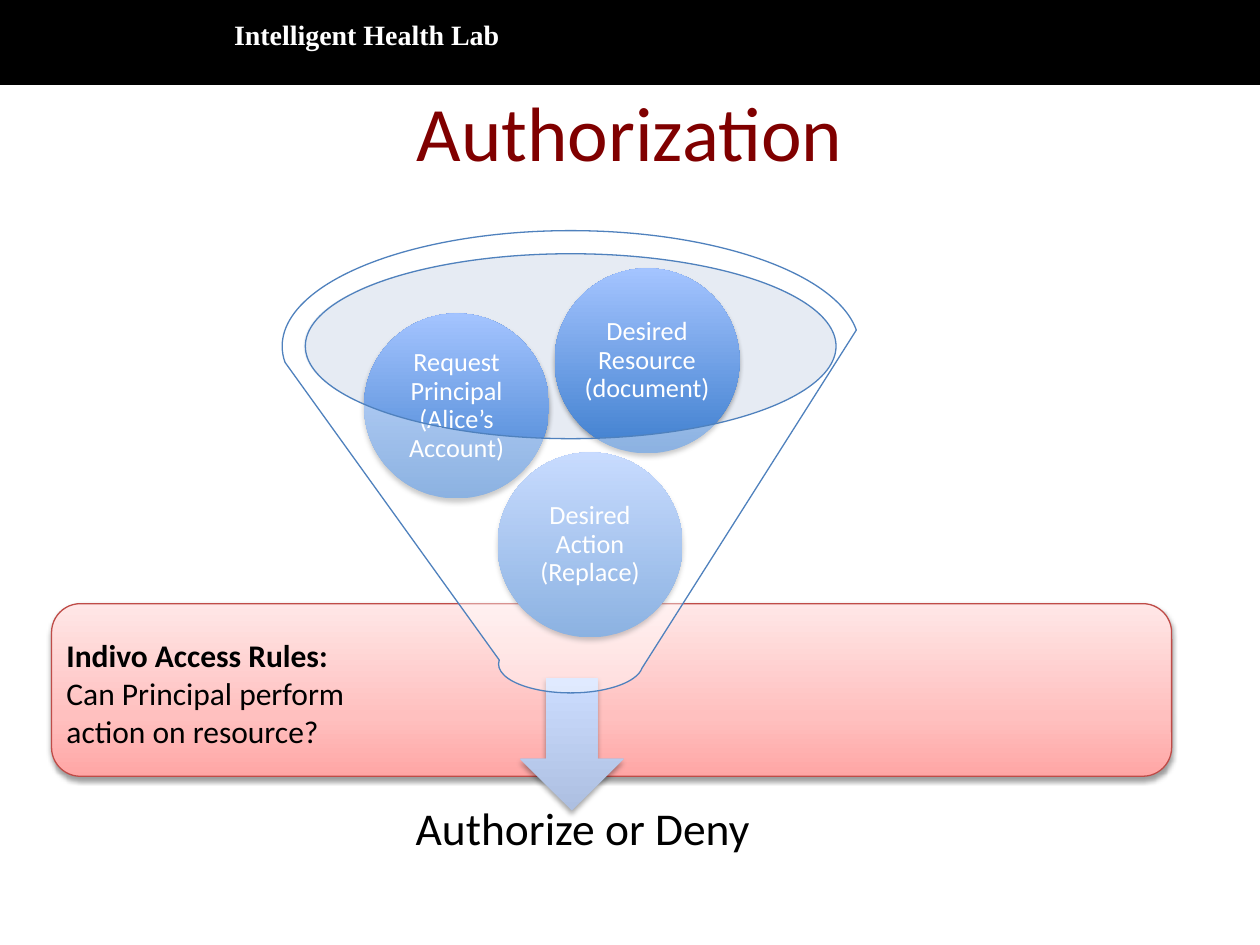
from copy import deepcopy

from lxml.etree import SubElement
from pptx import Presentation
from pptx.dml.color import RGBColor
from pptx.enum.shapes import MSO_SHAPE as Shape
from pptx.enum.text import MSO_ANCHOR as Anchor, MSO_AUTO_SIZE as AutoSize, PP_ALIGN as Align
from pptx.oxml.ns import qn
from pptx.util import Cm, Pt

BLACK = RGBColor(0x00, 0x00, 0x00)
WHITE = RGBColor(0xFF, 0xFF, 0xFF)
MAROON = RGBColor(0x80, 0x00, 0x00)
RED_LINE = RGBColor(0xBF, 0x4C, 0x48)
FUNNEL_LINE = RGBColor(0x4F, 0x81, 0xBD)
RIM = RGBColor(0xC2, 0xCD, 0xE1)
# Gradient stops run from bottom to top
RED_STOPS = [(0, RGBColor(0xFF, 0xA6, 0xA5)), (0.35, RGBColor(0xFF, 0xC0, 0xBF)),
             (1, RGBColor(0xFF, 0xE7, 0xE7))]
BUBBLE_STOPS = [(0, RGBColor(0x3F, 0x7F, 0xCE)), (1, RGBColor(0xA4, 0xC4, 0xFF))]
ARROW_STOPS = [(0, RGBColor(0xAD, 0xBF, 0xE1)), (1, RGBColor(0xCC, 0xDD, 0xFF))]

BUBBLE_SIZE = 3.73
BUBBLES = [
    ("Desired Action (Replace)", 10.03, 9.12),
    ("Request Principal (Alice’s Account)", 7.34, 6.32),
    ("Desired Resource (document)", 11.18, 5.41),
]


def add_shape(slide, kind, box, line=None):
    s = slide.shapes.add_shape(kind, *map(Cm, box))
    s.shadow.inherit = False
    if line is None:
        s.line.fill.background()
    else:
        s.line.color.rgb = line
        s.line.width = Pt(0.75)
    return s


def fill_solid(s, color, opacity=100):
    s.fill.solid()
    s.fill.fore_color.rgb = color
    if opacity < 100:
        rgb = s._element.spPr.find(qn("a:solidFill")).find(qn("a:srgbClr"))
        SubElement(rgb, qn("a:alpha"), val=str(opacity * 1000))


def fill_gradient(s, stops):
    s.fill.gradient()
    s.fill.gradient_angle = 90
    gs_list = s._element.spPr.find(qn("a:gradFill")).find(qn("a:gsLst"))
    while len(gs_list) < len(stops):
        gs_list.append(deepcopy(gs_list[0]))
    for stop, (position, color) in zip(s.fill.gradient_stops, stops):
        stop.position = position
        stop.color.rgb = color


def add_shadow(s, distance, opacity):
    effects = s._element.spPr.find(qn("a:effectLst"))
    shadow = SubElement(effects, qn("a:outerShdw"), blurRad=str(Pt(3.1)),
                        dist=str(Pt(distance)), dir="5400000", rotWithShape="0")
    rgb = SubElement(shadow, qn("a:srgbClr"), val="000000")
    SubElement(rgb, qn("a:alpha"), val=str(opacity * 1000))


def write_text(s, lines, font, frame=None, paragraph=None):
    """Write (text, bold) lines, using dicts of format values."""
    tf = s.text_frame
    tf.word_wrap = True
    for name, value in (frame or {}).items():
        setattr(tf, name, value)
    for i, (text, bold) in enumerate(lines):
        p = tf.paragraphs[0] if i == 0 else tf.add_paragraph()
        for name, value in (paragraph or {}).items():
            setattr(p, name, value)
        r = p.add_run()
        r.text = text
        for name, value in {"bold": bold, **font}.items():
            if name == "color":
                r.font.color.rgb = value
            else:
                setattr(r.font, name, value)


def add_text(slide, box, *args, **kwargs):
    write_text(slide.shapes.add_textbox(*map(Cm, box)), *args, **kwargs)


def insets(size):
    return {f"margin_{side}": Cm(size) for side in ("left", "top", "right", "bottom")}


def calibri(size, color):
    return {"name": "Calibri", "size": Pt(size), "color": color}


def add_bubble(slide, label, left, top):
    s = add_shape(slide, Shape.OVAL, (left, top, BUBBLE_SIZE, BUBBLE_SIZE))
    fill_gradient(s, BUBBLE_STOPS)
    add_shadow(s, 1.8, 35)
    write_text(s, [(label, False)], calibri(15, WHITE),
               {"vertical_anchor": Anchor.MIDDLE, **insets(0.05)},
               {"alignment": Align.CENTER, "line_spacing": 0.9})


def main():
    prs = Presentation()
    prs.slide_width, prs.slide_height = Cm(25.4), Cm(19.05)
    slide = prs.slides.add_slide(prs.slide_layouts[6])

    # Header band
    band = add_shape(slide, Shape.RECTANGLE, (0, 0, 25.4, 1.7), BLACK)
    fill_solid(band, BLACK)
    add_text(slide, (4.47, 0.23, 9.96, 0.94), [("Intelligent Health Lab", True)],
             {"name": "Times New Roman", "size": Pt(16), "color": WHITE},
             {"auto_size": AutoSize.SHAPE_TO_FIT_TEXT})

    # Access rules panel
    panel = add_shape(slide, Shape.ROUNDED_RECTANGLE, (1.04, 12.17, 22.58, 3.48), RED_LINE)
    fill_gradient(panel, RED_STOPS)
    add_shadow(panel, 1.6, 38)

    # Title
    add_text(slide, (1.27, 1.35, 22.86, 2.59), [("Authorization", False)],
             calibri(44, MAROON), {"vertical_anchor": Anchor.MIDDLE},
             {"alignment": Align.CENTER})

    # Funnel mouth, arrow and outcome
    mouth = add_shape(slide, Shape.OVAL, (6.12, 5.11, 10.72, 3.73))
    fill_solid(mouth, RIM, 40)
    arrow = add_shape(slide, Shape.DOWN_ARROW, (10.49, 13.67, 2.08, 2.67))
    fill_gradient(arrow, ARROW_STOPS)
    add_shadow(arrow, 1.8, 35)
    add_text(slide, (6.76, 15.7, 9.98, 2.08), [("Authorize or Deny", False)],
             calibri(26, BLACK), {"vertical_anchor": Anchor.MIDDLE, **insets(0.51)},
             {"alignment": Align.CENTER, "line_spacing": 0.9})

    # Inputs seen through the translucent funnel
    for bubble in BUBBLES:
        add_bubble(slide, *bubble)
    funnel = add_shape(slide, Shape.FUNNEL, (5.69, 4.65, 11.63, 9.32), FUNNEL_LINE)
    fill_solid(funnel, WHITE, 40)

    # Access rules text
    add_text(slide, (1.09, 12.7, 7.54, 2.57),
             [("Indivo Access Rules:", True),
              ("Can Principal perform action on resource?", False)],
             calibri(18, BLACK), {"auto_size": AutoSize.SHAPE_TO_FIT_TEXT})

    prs.save("out.pptx")


if __name__ == "__main__":
    main()
